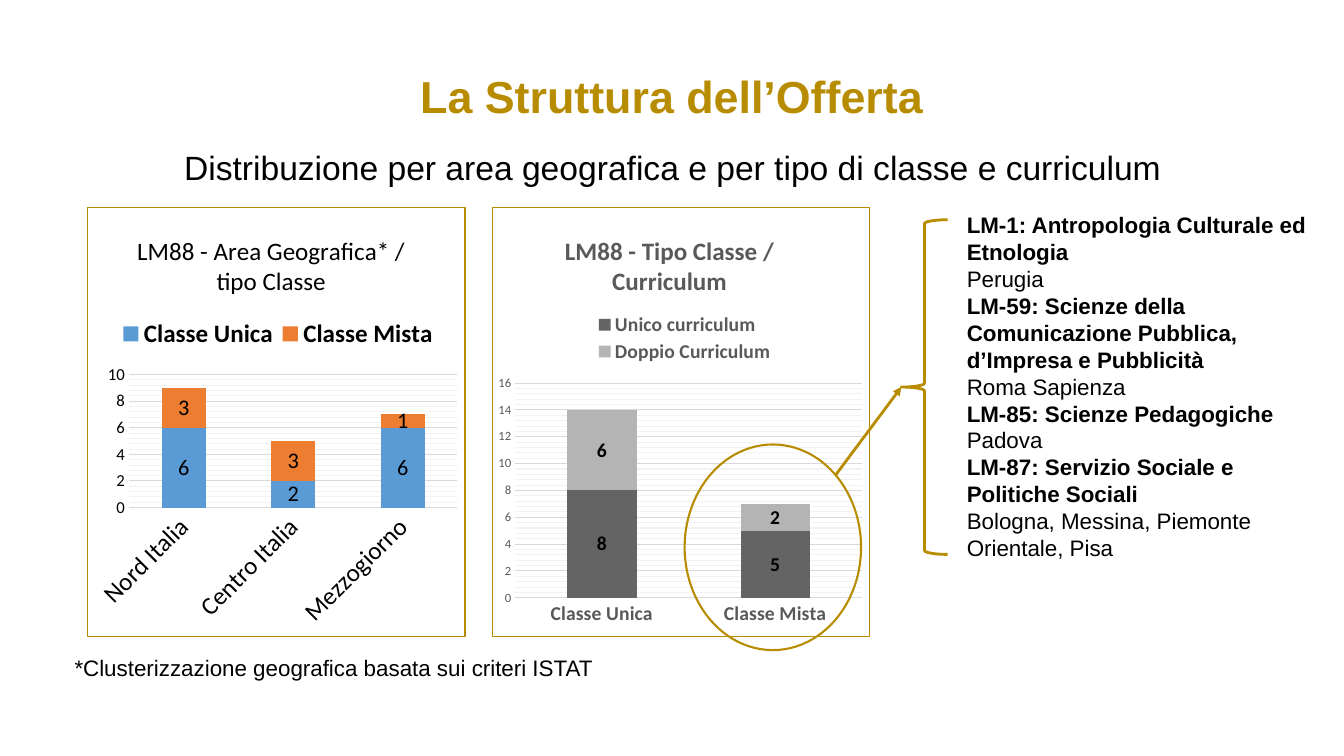
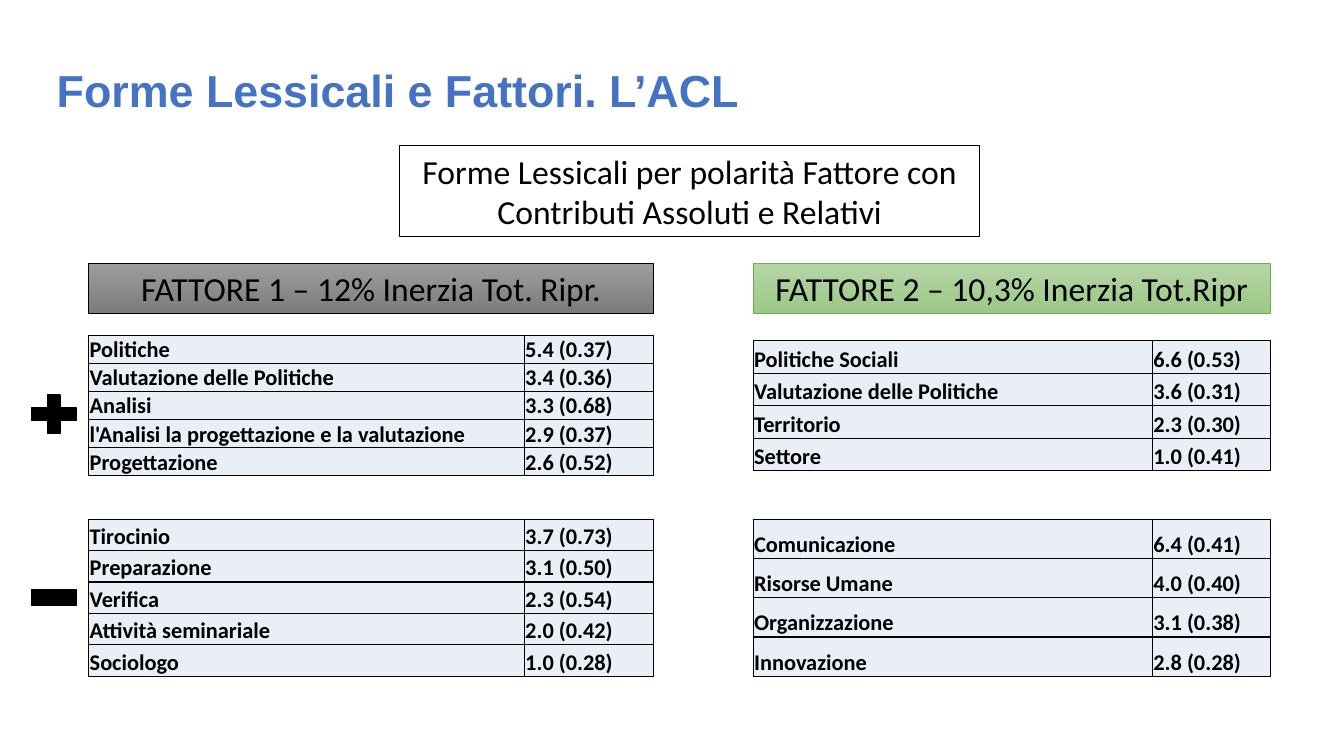
from lxml import etree
from pptx import Presentation
from pptx.chart.data import CategoryChartData
from pptx.dml.color import RGBColor
from pptx.enum.chart import XL_CHART_TYPE, XL_LABEL_POSITION, XL_LEGEND_POSITION, XL_TICK_MARK
from pptx.enum.shapes import MSO_CONNECTOR, MSO_SHAPE
from pptx.enum.text import MSO_ANCHOR, PP_ALIGN
from pptx.oxml import parse_xml
from pptx.oxml.ns import nsdecls, qn
from pptx.util import Inches, Pt

COLORS = {
    "black": "000000", "gold": "B88C00", "title_blue": "4472C4",
    "grid": "D9D9D9", "minor_grid": "F2F2F2", "gray_text": "595959",
    "blue": "5B9BD5", "orange": "ED7D31", "dark_gray": "646464", "light_gray": "B4B4B4",
    "cell": "EAEFF7", "gray_top": "9D9D9D", "gray_bottom": "7C7C7C",
    "green_top": "B5D5A7", "green_bottom": "9CC987", "green_line": "70AD47",
}


def color(name):
    return RGBColor.from_string(COLORS[name])


def style_font(font, size, name="black", bold=False, face="Calibri"):
    font.size, font.bold, font.name = Pt(size), bold, face
    font.color.rgb = color(name)


def set_line(line, name, width):
    line.color.rgb = color(name)
    line.width = Pt(width)


def line_xml(tag, name, width):
    """Line markup for parts without a public line format."""
    return (f'<a:{tag} {nsdecls("a")} w="{Pt(width)}"><a:solidFill>'
            f'<a:srgbClr val="{COLORS[name]}"/></a:solidFill></a:{tag}>')


def write(frame, lines, size, name="black", face="Arial", align=PP_ALIGN.CENTER, wrap=True):
    """Fill a text frame from (text, bold) pairs, one paragraph each."""
    frame.word_wrap = wrap
    for i, (text, bold) in enumerate(lines):
        paragraph = frame.paragraphs[0] if i == 0 else frame.add_paragraph()
        paragraph.text = text
        paragraph.alignment = align
        style_font(paragraph.font, size, name, bold, face)


def add_text(slide, box, lines, size, **style):
    frame = slide.shapes.add_textbox(*map(Inches, box)).text_frame
    write(frame, lines, size, **style)


def add_title(slide, box, text, name):
    add_text(slide, box, [(text, True)], 32, name=name, wrap=False)


def add_outline(slide, kind, box, line, width, fill=None):
    shape = slide.shapes.add_shape(kind, *map(Inches, box))
    shape.shadow.inherit = False
    if fill:
        shape.fill.solid()
        shape.fill.fore_color.rgb = color(fill)
    else:
        shape.fill.background()
    set_line(shape.line, line, width)
    return shape


def add_label(slide, box, text, line, width, gradient=None):
    """Framed heading, with an optional top-to-bottom gradient."""
    label = add_outline(slide, MSO_SHAPE.RECTANGLE, box, line, width)
    if gradient:
        label.fill.gradient()
        label.fill.gradient_angle = 270
        for position, (stop, name) in enumerate(zip(label.fill.gradient_stops, gradient)):
            stop.color.rgb = color(name)
            stop.position = position
    write(label.text_frame, [(text, False)], 24, face="Calibri")


def place(element, x, y, w=None, h=None, inner=False):
    """Give a chart part a layout in fractions of the chart."""
    old = element.find(qn("c:layout"))
    if old is not None:
        element.remove(old)
    parts = '<c:layoutTarget val="inner"/>' if inner else ""
    parts += '<c:xMode val="edge"/><c:yMode val="edge"/>'
    for tag, value in zip("xywh", (x, y, w, h)):
        if value is not None:
            parts += f'<c:{tag} val="{value}"/>'
    layout = parse_xml(f'<c:layout {nsdecls("c")}><c:manualLayout>{parts}</c:manualLayout></c:layout>')
    before = element.find(qn("c:tx"))
    if before is None:
        before = element.find(qn("c:legendPos"))
    if before is None:
        element.insert(0, layout)
    else:
        before.addnext(layout)


def add_stacked_chart(slide, box, title, categories, series, text, bold, sizes, top, layouts, border):
    """Stacked columns; sizes are those of legend, category, value and data labels."""
    legend_size, category_size, value_size, label_size = sizes
    data = CategoryChartData(number_format="###0")
    data.categories = categories
    for name, values, _ in series:
        data.add_series(name, values)
    chart = slide.shapes.add_chart(XL_CHART_TYPE.COLUMN_STACKED, *map(Inches, box), data).chart
    style_font(chart.font, 10)

    # Frame, title and legend
    chart._chartSpace.find(qn("c:chart")).addnext(parse_xml(
        f'<c:spPr {nsdecls("c", "a")}><a:noFill/>{line_xml("ln", "gold", border)}</c:spPr>'))
    heading = chart.chart_title.text_frame.paragraphs[0]
    heading.text = title
    style_font(heading.font, 18, text, bold)
    chart.chart_title.include_in_layout = False
    chart.has_legend = True
    chart.legend.position = XL_LEGEND_POSITION.TOP
    chart.legend.include_in_layout = False
    style_font(chart.legend.font, legend_size, text, True)

    # Axes
    category, value = chart.category_axis, chart.value_axis
    for axis, size, is_bold in ((category, category_size, bold), (value, value_size, False)):
        axis.major_tick_mark = axis.minor_tick_mark = XL_TICK_MARK.NONE
        style_font(axis.tick_labels.font, size, text, is_bold)
    set_line(category.format.line, "grid", 0.75)
    value.format.line.fill.background()
    value.minimum_scale, value.maximum_scale, value.major_unit = 0, top, 2
    value.has_major_gridlines = value.has_minor_gridlines = True
    set_line(value.major_gridlines.format.line, "grid", 0.75)
    value._element.find(qn("c:minorGridlines")).append(parse_xml(
        f'<c:spPr {nsdecls("c", "a")}>{line_xml("ln", "minor_grid", 0.75)}</c:spPr>'))

    # Columns and their labels
    plot = chart.plots[0]
    plot.gap_width, plot.overlap, plot.vary_by_categories = 150, 100, False
    for column, (_, _, fill) in zip(plot.series, series):
        column.format.fill.solid()
        column.format.fill.fore_color.rgb = color(fill)
        labels = column.data_labels
        labels.show_value = True
        labels.number_format, labels.number_format_is_linked = "###0", False
        labels.position = XL_LABEL_POSITION.CENTER
        style_font(labels.font, label_size, bold=bold)

    title_at, legend_at, plot_at = layouts
    place(chart.chart_title._element, *title_at)
    place(chart.legend._element, *legend_at)
    place(chart._chartSpace.chart.plotArea, *plot_at, inner=True)
    return chart


def add_arrow(slide, start, target, side):
    arrow = slide.shapes.add_connector(
        MSO_CONNECTOR.STRAIGHT, *map(Inches, start), target.left, target.top + target.height // 2)
    arrow.end_connect(target, side)
    set_line(arrow.line, "gold", 2)
    etree.SubElement(arrow.line._get_or_add_ln(), qn("a:tailEnd"), type="triangle")
    etree.SubElement(arrow._element.spPr, qn("a:effectLst"))


def add_factor_table(slide, box, value_width, rows):
    table = slide.shapes.add_table(len(rows), 2, *map(Inches, box)).table
    table.first_row = table.horz_banding = False
    table.columns[0].width = Inches(box[2] - value_width)
    table.columns[1].width = Inches(value_width)
    for r, row in enumerate(rows):
        for c, text in enumerate(row):
            cell = table.cell(r, c)
            cell.margin_left = cell.margin_top = cell.margin_right = Inches(0.01)
            cell.margin_bottom = 0
            cell.vertical_anchor = MSO_ANCHOR.BOTTOM
            properties = cell._tc.get_or_add_tcPr()
            for side in "LRTB":
                properties.append(parse_xml(line_xml(f"ln{side}", "black", 1)))
            cell.fill.solid()
            cell.fill.fore_color.rgb = color("cell")
            paragraph = cell.text_frame.paragraphs[0]
            paragraph.text = text
            style_font(paragraph.font, 16, bold=True)


def add_factor(slide, x, width, value_width, heading, line, gradient, positive_box, positive, negative):
    """One factor: heading, table of positive forms, table of negative forms."""
    add_label(slide, (x, 2.61, width, 0.5), heading, line, 0.5, gradient)
    top, height = positive_box
    add_factor_table(slide, (x, top, width, height), value_width, positive)
    add_factor_table(slide, (x, 5.15, width, 1.56), value_width, negative)


def build_offer(slide):
    add_title(slide, (4.05, 0.63, 5.23, 0.64), "La Struttura dell’Offerta", "gold")
    add_text(slide, (0.86, 1.41, 11.62, 0.5),
             [("Distribuzione per area geografica e per tipo di classe e curriculum", False)], 24)

    # Charts
    area = add_stacked_chart(
        slide, (0.86, 2.05, 3.76, 4.27), "LM88 - Area Geografica* / tipo Classe",
        ["Nord Italia", "Centro Italia", "Mezzogiorno"],
        [("Classe Unica", (6, 2, 6), "blue"), ("Classe Mista", (3, 3, 1), "orange")],
        "black", False, (18, 18, 12, 16), 10,
        ((0.12, 0.05), (0.07, 0.25, 0.87, 0.09), (0.11, 0.39, 0.87, 0.31)), 1)
    area.category_axis._element.find(qn("c:txPr")).find(qn("a:bodyPr")).set("rot", "-2700000")
    add_stacked_chart(
        slide, (4.88, 2.05, 3.75, 4.27), "LM88 - Tipo Classe / Curriculum",
        ["Classe Unica", "Classe Mista"],
        [("Unico curriculum", (8, 5), "dark_gray"), ("Doppio Curriculum", (6, 2), "light_gray")],
        "gray_text", True, (14, 14, 9, 14), 16,
        ((0.18, 0.05), (0.26, 0.24, 0.5, 0.13), (0.06, 0.41, 0.92, 0.5)), 0.75)
    add_text(slide, (0.56, 6.44, 5.5, 0.37),
             [("*Clusterizzazione geografica basata sui criteri ISTAT", False)], 16)

    # Mixed classes and their sites
    degrees = [
        ("LM-1: Antropologia Culturale ed Etnologia", "Perugia"),
        ("LM-59: Scienze della Comunicazione Pubblica, d’Impresa e Pubblicità", "Roma Sapienza"),
        ("LM-85: Scienze Pedagogiche", "Padova"),
        ("LM-87: Servizio Sociale e Politiche Sociali", "Bologna, Messina, Piemonte Orientale, Pisa"),
    ]
    lines = [(text, bold) for pair in degrees for text, bold in zip(pair, (True, False))]
    add_text(slide, (9.49, 2.05, 3.58, 3.6), lines, 16, align=PP_ALIGN.LEFT)
    add_outline(slide, MSO_SHAPE.OVAL, (6.79, 4.41, 1.75, 2.04), "gold", 1.5)
    brace = add_outline(slide, MSO_SHAPE.LEFT_BRACE, (8.94, 2.18, 0.46, 3.32), "gold", 2)
    add_arrow(slide, (8.29, 4.71), brace, 1)


def build_factors(slide):
    add_label(slide, (3.96, 1.44, 5.76, 0.91),
              "Forme Lessicali per polarità Fattore con Contributi Assoluti e Relativi", "black", 0.75)
    add_title(slide, (0.44, 0.57, 7.02, 0.64), "Forme Lessicali e Fattori. L’ACL", "title_blue")

    # Factors
    add_factor(
        slide, 0.88, 5.6, 1.28, "FATTORE 1 – 12% Inerzia Tot. Ripr.", "black",
        ("gray_top", "gray_bottom"), (3.33, 1.39),
        [("Politiche", "5.4 (0.37)"), ("Valutazione delle Politiche", "3.4 (0.36)"),
         ("Analisi", "3.3 (0.68)"), ("l'Analisi la progettazione e la valutazione", "2.9 (0.37)"),
         ("Progettazione", "2.6 (0.52)")],
        [("Tirocinio", "3.7 (0.73)"), ("Preparazione", "3.1 (0.50)"), ("Verifica", "2.3 (0.54)"),
         ("Attività seminariale", "2.0 (0.42)"), ("Sociologo", "1.0 (0.28)")])
    add_factor(
        slide, 7.47, 5.13, 1.17, "FATTORE 2 – 10,3% Inerzia Tot.Ripr", "green_line",
        ("green_top", "green_bottom"), (3.38, 1.29),
        [("Politiche Sociali", "6.6 (0.53)"), ("Valutazione delle Politiche", "3.6 (0.31)"),
         ("Territorio", "2.3 (0.30)"), ("Settore", "1.0 (0.41)")],
        [("Comunicazione", "6.4 (0.41)"), ("Risorse Umane", "4.0 (0.40)"),
         ("Organizzazione", "3.1 (0.38)"), ("Innovazione", "2.8 (0.28)")])

    # Polarity signs
    for sign, top, height in ((MSO_SHAPE.MATH_PLUS, 3.85, 0.52), (MSO_SHAPE.MATH_MINUS, 5.59, 0.68)):
        add_outline(slide, sign, (0.23, top, 0.61, height), "black", 1, "black")


def main():
    deck = Presentation()
    deck.slide_width, deck.slide_height = Inches(13.33), Inches(7.5)
    for build in (build_offer, build_factors):
        build(deck.slides.add_slide(deck.slide_layouts[6]))
    deck.save("out.pptx")


if __name__ == "__main__":
    main()
